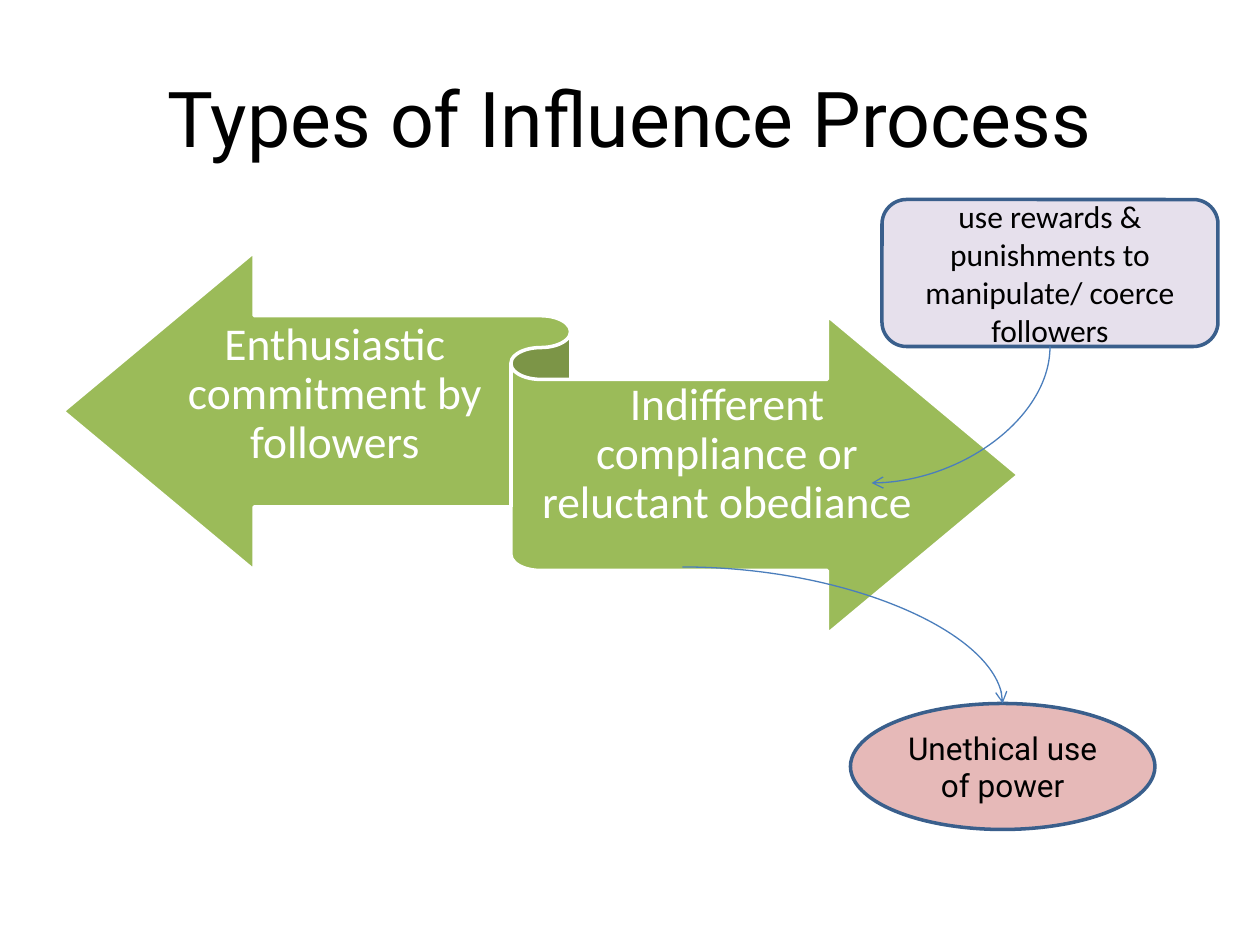
from dataclasses import dataclass

from lxml.etree import SubElement
from pptx import Presentation
from pptx.dml.color import RGBColor
from pptx.enum.shapes import MSO_CONNECTOR, MSO_SHAPE
from pptx.enum.text import MSO_ANCHOR, PP_ALIGN
from pptx.oxml.ns import qn
from pptx.util import Inches, Pt


@dataclass(frozen=True)
class Theme:
    black: str = "000000"
    white: str = "FFFFFF"
    ribbon: str = "9BBB59"
    rose: str = "E6B9B8"
    lilac: str = "E6E0EC"
    outline: str = "3A5F8C"
    arrow: str = "4B7EBC"
    sans: str = "Calibri"
    heading: str = "Roboto"
    title_size: float = 44
    ribbon_size: float = 26
    note_size: float = 18
    border: float = 2
    hairline: float = 0.75


T = Theme()
COLS, ROWS = 120, 90  # grid over the 10 x 7.5 inch slide
UNIT = Inches(10) / COLS


def grid(*cells):
    return [round(c * UNIT) for c in cells]


def rgb(value):
    return RGBColor.from_string(value)


def write(shape, text, font, size, color):
    """Centred, wrapped text in one paragraph."""
    tf = shape.text_frame
    tf.text = text
    tf.word_wrap = True
    tf.vertical_anchor = MSO_ANCHOR.MIDDLE
    p = tf.paragraphs[0]
    p.alignment = PP_ALIGN.CENTER
    f = p.runs[0].font
    f.name, f.size, f.color.rgb = font, Pt(size), rgb(color)
    return tf


def add_label(s, box, text, font, size, color):
    return write(s.shapes.add_textbox(*grid(*box)), text, font, size, color)


def add_ribbon_label(s, box, text):
    tf = add_label(s, box, text, T.sans, T.ribbon_size, T.white)
    tf.margin_left = tf.margin_right = 0
    tf.margin_top, tf.margin_bottom = Inches(0.1), Inches(0.11)
    p = tf.paragraphs[0]
    p.line_spacing = 0.9
    p.space_after = Pt(0.35 * T.ribbon_size)


def add_filled(s, kind, box, fill, line):
    sp = s.shapes.add_shape(kind, *grid(*box))
    sp.shadow.inherit = False
    sp.fill.solid()
    sp.fill.fore_color.rgb = rgb(fill)
    sp.line.color.rgb = rgb(line)
    sp.line.width = Pt(T.border)
    return sp


def add_note(s, kind, box, fill, text, font):
    sp = add_filled(s, kind, box, fill, T.outline)
    write(sp, text, font, T.note_size, T.black)


def add_curve(s, start, end, quarter_turn=False):
    """Quarter-arc arrow; a turned one leaves its start vertically."""
    (x1, y1), (x2, y2) = start, end
    if quarter_turn:  # unrotated frame shares the centre, with sides swapped
        cx, cy = (x1 + x2) / 2, (y1 + y2) / 2
        half_w, half_h = abs(y2 - y1) / 2, abs(x2 - x1) / 2
        x1, y1, x2, y2 = cx - half_w, cy - half_h, cx + half_w, cy + half_h
    c = s.shapes.add_connector(MSO_CONNECTOR.CURVE, *grid(x1, y1, x2, y2))
    c.line.color.rgb = rgb(T.arrow)
    c.line.width = Pt(T.hairline)
    sp_pr = c._element.spPr
    sp_pr.find(qn("a:prstGeom")).set("prst", "curvedConnector2")
    if quarter_turn:
        sp_pr.find(qn("a:xfrm")).set("rot", str(90 * 60000))
    SubElement(sp_pr.find(qn("a:ln")), qn("a:tailEnd"), type="arrow")
    SubElement(sp_pr, qn("a:effectLst"))


def main():
    prs = Presentation()
    prs.slide_width, prs.slide_height = grid(COLS, ROWS)
    s = prs.slides.add_slide(prs.slide_layouts[6])

    # Title
    add_label(s, (6, 3.6, 108, 15), "Types of Influence Process",
              T.heading, T.title_size, T.black)

    # Two-way ribbon with its two outcomes
    add_filled(s, MSO_SHAPE.LEFT_RIGHT_RIBBON, (6, 24, 91, 36.4),
               T.ribbon, T.white)
    add_ribbon_label(s, (16.9, 28.7, 30, 17.9),
                     "Enthusiastic commitment by followers")
    add_ribbon_label(s, (51.5, 34.4, 35.5, 17.9),
                     "Indifferent compliance or reluctant obediance")

    # Notes and their arrows
    add_note(s, MSO_SHAPE.OVAL, (81, 67, 29, 12), T.rose,
             "Unethical use of power", T.heading)
    add_curve(s, (65, 54), (95.5, 67))
    add_note(s, MSO_SHAPE.ROUNDED_RECTANGLE, (84, 19, 32, 14), T.lilac,
             "use rewards & punishments to manipulate/ coerce followers",
             T.sans)
    add_curve(s, (100, 33), (83, 46), quarter_turn=True)

    prs.save("out.pptx")


if __name__ == "__main__":
    main()
